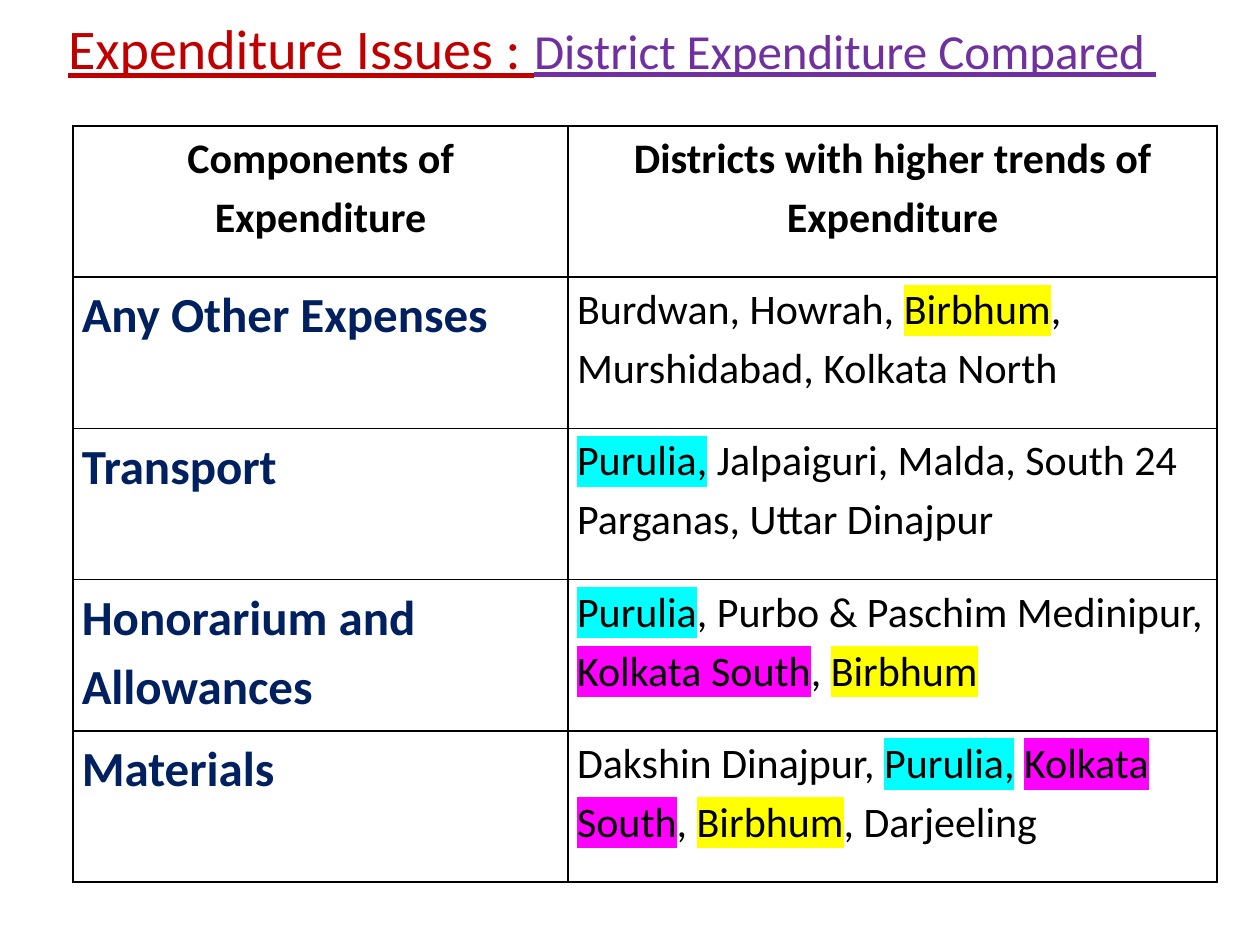
from typing import NamedTuple

from lxml.etree import SubElement
from pptx import Presentation
from pptx.dml.color import RGBColor
from pptx.enum.text import MSO_ANCHOR, PP_ALIGN
from pptx.oxml.ns import qn
from pptx.util import Inches, Pt

FONT = "Calibri"
BLACK = RGBColor(0x00, 0x00, 0x00)
RED = RGBColor(0xC0, 0x00, 0x00)
PURPLE = RGBColor(0x70, 0x30, 0xA0)
NAVY = RGBColor(0x00, 0x20, 0x60)
YELLOW = RGBColor(0xFF, 0xFF, 0x00)
CYAN = RGBColor(0x00, 0xFF, 0xFF)
MAGENTA = RGBColor(0xFF, 0x00, 0xFF)


class Span(NamedTuple):
    text: str
    highlight: RGBColor | None = None


class Style(NamedTuple):
    size: int
    color: RGBColor
    bold: bool
    align: PP_ALIGN


class Row(NamedTuple):
    component: str
    districts: list[Span]


HEADER = Style(24, BLACK, True, PP_ALIGN.CENTER)
COMPONENT = Style(28, NAVY, True, PP_ALIGN.LEFT)
DISTRICTS = Style(24, BLACK, False, PP_ALIGN.LEFT)

HEADINGS = ["Components of Expenditure", "Districts with higher trends of Expenditure"]
BIRBHUM = Span("Birbhum", YELLOW)
KOLKATA_SOUTH = Span("Kolkata South", MAGENTA)
ROWS = [
    Row("Any Other Expenses",
        [Span("Burdwan, Howrah, "), BIRBHUM, Span(", Murshidabad, Kolkata North")]),
    Row("Transport",
        [Span("Purulia,", CYAN),
         Span(" Jalpaiguri, Malda, South 24 Parganas, Uttar Dinajpur")]),
    Row("Honorarium and Allowances",
        [Span("Purulia", CYAN), Span(", Purbo & Paschim Medinipur, "),
         KOLKATA_SOUTH, Span(", "), BIRBHUM]),
    Row("Materials",
        [Span("Dakshin Dinajpur, "), Span("Purulia,", CYAN), Span(" "),
         KOLKATA_SOUTH, Span(", "), BIRBHUM, Span(", Darjeeling")]),
]
COL_WIDTHS = [3.93, 5.15]
ROW_HEIGHT = 1.2


def add_solid(parent, tag: str, color: RGBColor) -> None:
    SubElement(SubElement(parent, qn(tag)), qn("a:srgbClr"), val=str(color))


def set_borders(cell) -> None:
    tc_pr = cell._tc.get_or_add_tcPr()
    for i, side in enumerate(("a:lnL", "a:lnR", "a:lnT", "a:lnB")):
        ln = SubElement(tc_pr, qn(side), w=str(Pt(1)))
        add_solid(ln, "a:solidFill", BLACK)
        tc_pr.insert(i, ln)


def fill_cell(cell, spans: list[Span], style: Style) -> None:
    cell.margin_left = cell.margin_right = Inches(0.07)
    cell.margin_top = cell.margin_bottom = 0
    cell.fill.background()
    set_borders(cell)
    p = cell.text_frame.paragraphs[0]
    p.alignment = style.align
    p.line_spacing = 1.15
    p.font.name = FONT
    p.font.size = Pt(style.size)
    p.font.bold = style.bold
    p.font.color.rgb = style.color
    for span in spans:
        r = p.add_run()
        r.text = span.text
        if span.highlight is not None:
            add_solid(r._r.get_or_add_rPr(), "a:highlight", span.highlight)


def add_title(s) -> None:
    sp = s.shapes.title
    sp.left, sp.top, sp.width, sp.height = 0, 0, Inches(9.75), Inches(0.75)
    tf = sp.text_frame
    tf.word_wrap = True
    tf.vertical_anchor = MSO_ANCHOR.MIDDLE
    tf.margin_left = Inches(0.54)
    p = tf.paragraphs[0]
    p.alignment = PP_ALIGN.LEFT
    p.font.name = FONT
    p.font.underline = True
    for text, size, color in (
        ("Expenditure Issues : ", 32, RED),
        ("District Expenditure Compared ", 28, PURPLE),
    ):
        r = p.add_run()
        r.text = text
        r.font.size = Pt(size)
        r.font.color.rgb = color


def add_expenditure_table(s) -> None:
    n_rows = len(ROWS) + 1
    table = s.shapes.add_table(
        n_rows, len(COL_WIDTHS), Inches(0.58), Inches(1),
        Inches(sum(COL_WIDTHS)), Inches(ROW_HEIGHT * n_rows),
    ).table
    table.first_row = False
    table.horz_banding = False
    for col, width in zip(table.columns, COL_WIDTHS):
        col.width = Inches(width)
    for row in table.rows:
        row.height = Inches(ROW_HEIGHT)
    for i, heading in enumerate(HEADINGS):
        fill_cell(table.cell(0, i), [Span(heading)], HEADER)
    for i, row in enumerate(ROWS, start=1):
        fill_cell(table.cell(i, 0), [Span(row.component)], COMPONENT)
        fill_cell(table.cell(i, 1), row.districts, DISTRICTS)


def main() -> None:
    prs = Presentation()
    prs.slide_width, prs.slide_height = Inches(10), Inches(7.5)
    s = prs.slides.add_slide(prs.slide_layouts[5])
    add_title(s)
    add_expenditure_table(s)
    prs.save("out.pptx")


if __name__ == "__main__":
    main()
